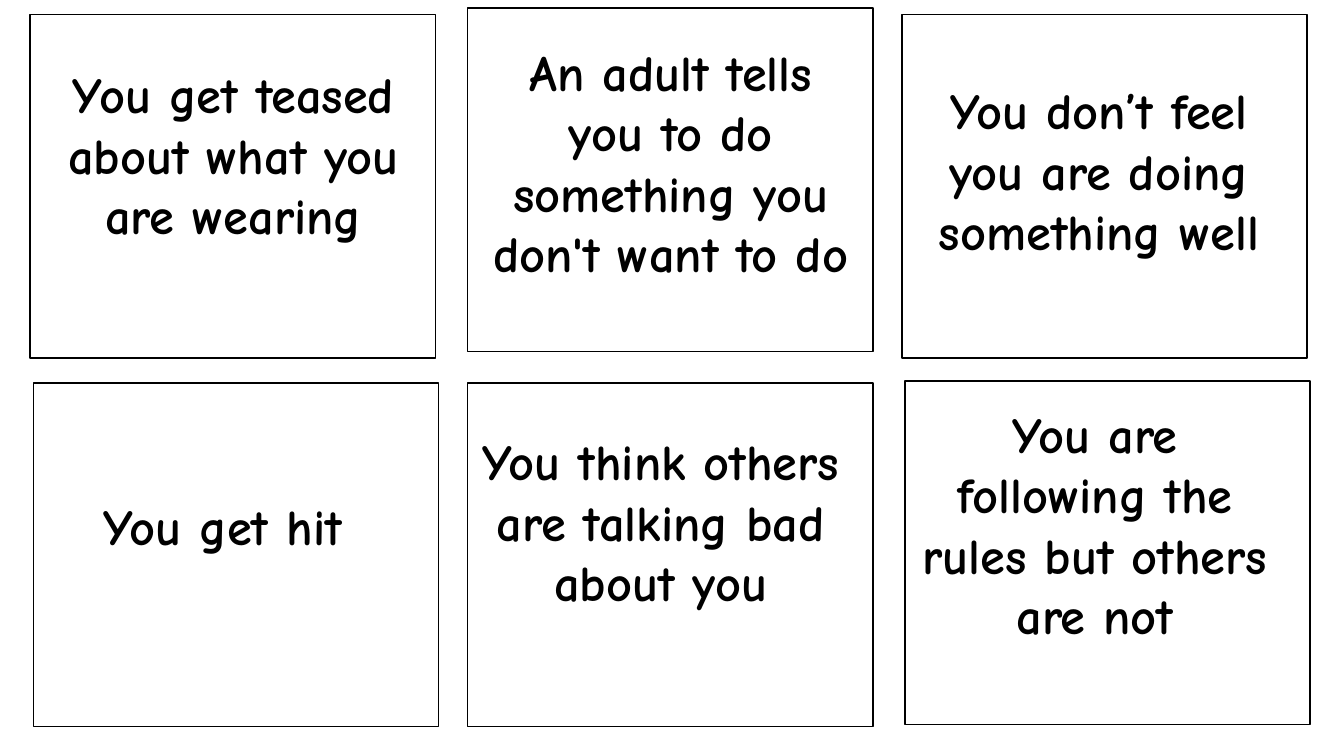
"""Build a slide of six scenario cards in a three-by-two layout."""
from pptx import Presentation
from pptx import util as u
from pptx.dml.color import RGBColor
from pptx.enum import shapes, text

BLACK = RGBColor(0, 0, 0)
WHITE = RGBColor(255, 255, 255)
FONT = "Comic Neue"
CARD_WIDTH, CARD_HEIGHT = 10.21, 8.66
TEXT_WIDTH = 9.73

# wording, card (left, top), text (left, top, height), all in cm
CARDS = [
    ("You get teased about what you are wearing", (0.76, 0.36), (1.02, 1.47, 6.4)),
    ("An adult tells you to do something you don't want to do", (11.79, 0.2), (12.04, 0.91, 7.95)),
    ("You don’t feel you are doing something well", (22.73, 0.36), (22.83, 1.88, 4.88)),
    ("You get hit ", (0.84, 9.65), (0.97, 12.34, 1.8)),
    ("You think others are talking bad about you", (11.79, 9.65), (11.79, 10.72, 6.4)),
    ("You are following the rules but others are not", (22.81, 9.6), (22.73, 10.03, 6.4)),
]


def add_card(slide, left, top):
    card = slide.shapes.add_shape(
        shapes.MSO_SHAPE.RECTANGLE, u.Cm(left), u.Cm(top), u.Cm(CARD_WIDTH), u.Cm(CARD_HEIGHT)
    )
    card.shadow.inherit = False
    card.fill.solid()
    card.fill.fore_color.rgb = WHITE
    card.line.color.rgb = BLACK
    card.line.width = u.Pt(1)


def add_scenario(slide, wording, left, top, height):
    box = slide.shapes.add_textbox(u.Cm(left), u.Cm(top), u.Cm(TEXT_WIDTH), u.Cm(height))
    frame = box.text_frame
    frame.word_wrap = True
    frame.auto_size = text.MSO_AUTO_SIZE.SHAPE_TO_FIT_TEXT
    paragraph = frame.paragraphs[0]
    paragraph.text = wording
    paragraph.alignment = text.PP_ALIGN.CENTER
    font = paragraph.runs[0].font
    font.name = FONT
    font.size = u.Pt(36)
    font.bold = True
    font.color.rgb = BLACK


def main():
    presentation = Presentation()
    presentation.slide_width = u.Cm(33.87)
    presentation.slide_height = u.Cm(19.05)
    slide = presentation.slides.add_slide(presentation.slide_layouts[6])
    for wording, card_place, text_place in CARDS:
        add_card(slide, *card_place)
        add_scenario(slide, wording, *text_place)
    presentation.save("out.pptx")


if __name__ == "__main__":
    main()
